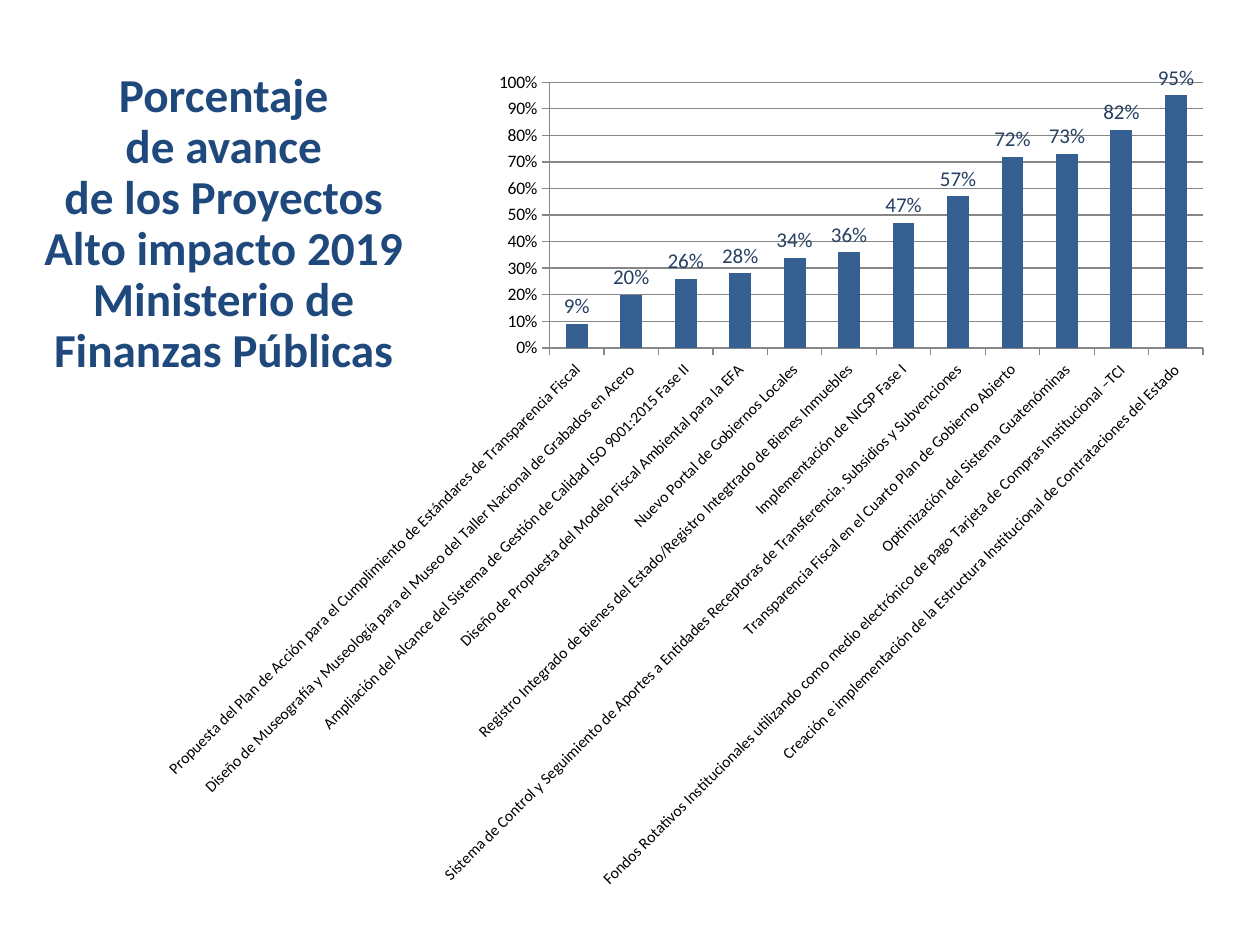
from dataclasses import dataclass

from pptx import Presentation
from pptx.chart.data import CategoryChartData
from pptx.dml.color import RGBColor
from pptx.enum.chart import XL_CHART_TYPE, XL_LABEL_POSITION, XL_TICK_MARK
from pptx.enum.text import MSO_ANCHOR, MSO_AUTO_SIZE, PP_ALIGN
from pptx.util import Inches, Pt

COLUMNS = XL_CHART_TYPE.COLUMN_CLUSTERED
OUTSIDE_END = XL_LABEL_POSITION.OUTSIDE_END
TICK_OUT = XL_TICK_MARK.OUTSIDE
TICK_NONE = XL_TICK_MARK.NONE
MIDDLE = MSO_ANCHOR.MIDDLE
NO_AUTOFIT = MSO_AUTO_SIZE.NONE
CENTER = PP_ALIGN.CENTER
TITLE_ONLY = 5


@dataclass(frozen=True)
class Theme:
    font: str = "Calibri"
    title: RGBColor = RGBColor.from_string("1F497D")
    text: RGBColor = RGBColor.from_string("000000")
    bar: RGBColor = RGBColor.from_string("376092")
    label: RGBColor = RGBColor.from_string("254061")
    line: RGBColor = RGBColor.from_string("868686")
    title_size: Pt = Pt(27)
    label_size: Pt = Pt(12)
    axis_size: Pt = Pt(10)
    category_size: Pt = Pt(9)


THEME = Theme()

TITLE_LINES = [
    "Porcentaje",
    "de avance",
    "de los Proyectos",
    "Alto impacto 2019",
    "Ministerio de Finanzas Públicas",
]

PROGRESS = {
    "Propuesta del Plan de Acción para el Cumplimiento de Estándares de Transparencia Fiscal": 0.09,
    "Diseño de Museografía y Museología para el Museo del Taller Nacional de Grabados en Acero": 0.20,
    "Ampliación del Alcance del Sistema de Gestión de Calidad ISO 9001:2015 Fase II": 0.26,
    "Diseño de Propuesta del Modelo Fiscal Ambiental para la EFA": 0.28,
    "Nuevo Portal de Gobiernos Locales": 0.34,
    "Registro Integrado de Bienes del Estado/Registro Integtrado de Bienes Inmuebles": 0.36,
    "Implementación de NICSP Fase I": 0.47,
    "Sistema de Control y Seguimiento de Aportes a Entidades Receptoras de Transferencia, "
    "Subsidios y Subvenciones": 0.57,
    "Transparencia Fiscal en el Cuarto Plan de Gobierno Abierto": 0.72,
    "Optimización del Sistema Guatenóminas": 0.73,
    "Fondos Rotativos Institucionales utilizando como medio electrónico de pago Tarjeta de "
    "Compras Institucional –TCI": 0.82,
    "Creación e implementación de la Estructura Institucional de Contrataciones del Estado": 0.95,
}


def set_font(font, size, color, bold=False):
    font.name = THEME.font
    font.size = size
    font.bold = bold
    font.color.rgb = color


def place_title(s, left, top, width, height):
    title = s.shapes.title
    title.left, title.top, title.width, title.height = left, top, width, height
    tf = title.text_frame
    tf.text = "\n".join(TITLE_LINES)
    tf.word_wrap = True
    tf.auto_size = NO_AUTOFIT
    tf.vertical_anchor = MIDDLE
    tf.margin_left = tf.margin_right = tf.margin_top = tf.margin_bottom = 0
    for p in tf.paragraphs:
        p.alignment = CENTER
        p.line_spacing = 0.9
        p.space_before = Pt(0)
        for r in p.runs:
            set_font(r.font, THEME.title_size, THEME.title, bold=True)


def format_axis(axis, size):
    axis.major_tick_mark = TICK_OUT
    axis.minor_tick_mark = TICK_NONE
    axis.format.line.color.rgb = THEME.line
    axis.format.line.width = Pt(0.75)
    set_font(axis.tick_labels.font, size, THEME.text)


def place_progress_chart(s, left, top, width, height):
    data = CategoryChartData(number_format="0%")
    data.categories = list(PROGRESS)
    data.add_series("Series 1", list(PROGRESS.values()))
    chart = s.shapes.add_chart(COLUMNS, left, top, width, height, data).chart
    chart.has_legend = False
    chart.has_title = False
    set_font(chart.font, THEME.axis_size, THEME.text)

    categories = chart.category_axis
    format_axis(categories, THEME.category_size)
    # Slant the long project names upwards by 45 degrees
    categories._element.txPr.bodyPr.set("rot", "-2700000")

    values = chart.value_axis
    format_axis(values, THEME.axis_size)
    values.minimum_scale, values.maximum_scale, values.major_unit = 0, 1, 0.1
    values.tick_labels.number_format = "0%"
    values.tick_labels.number_format_is_linked = False
    values.has_major_gridlines = True
    values.major_gridlines.format.line.color.rgb = THEME.line
    values.major_gridlines.format.line.width = Pt(0.75)

    plot = chart.plots[0]
    plot.gap_width = 150
    plot.vary_by_categories = False
    fill = plot.series[0].format.fill
    fill.solid()
    fill.fore_color.rgb = THEME.bar

    plot.has_data_labels = True
    labels = plot.data_labels
    labels.show_value = True
    labels.position = OUTSIDE_END
    labels.number_format = "0%"
    labels.number_format_is_linked = False
    set_font(labels.font, THEME.label_size, THEME.label)


def main():
    prs = Presentation()
    prs.slide_width, prs.slide_height = Inches(10), Inches(7.5)
    s = prs.slides.add_slide(prs.slide_layouts[TITLE_ONLY])
    place_title(s, Inches(0.28), Inches(0.29), Inches(2.99), Inches(2.99))
    place_progress_chart(s, Inches(1.14), Inches(0.52), Inches(8.58), Inches(6.59))
    prs.save("out.pptx")


if __name__ == "__main__":
    main()
